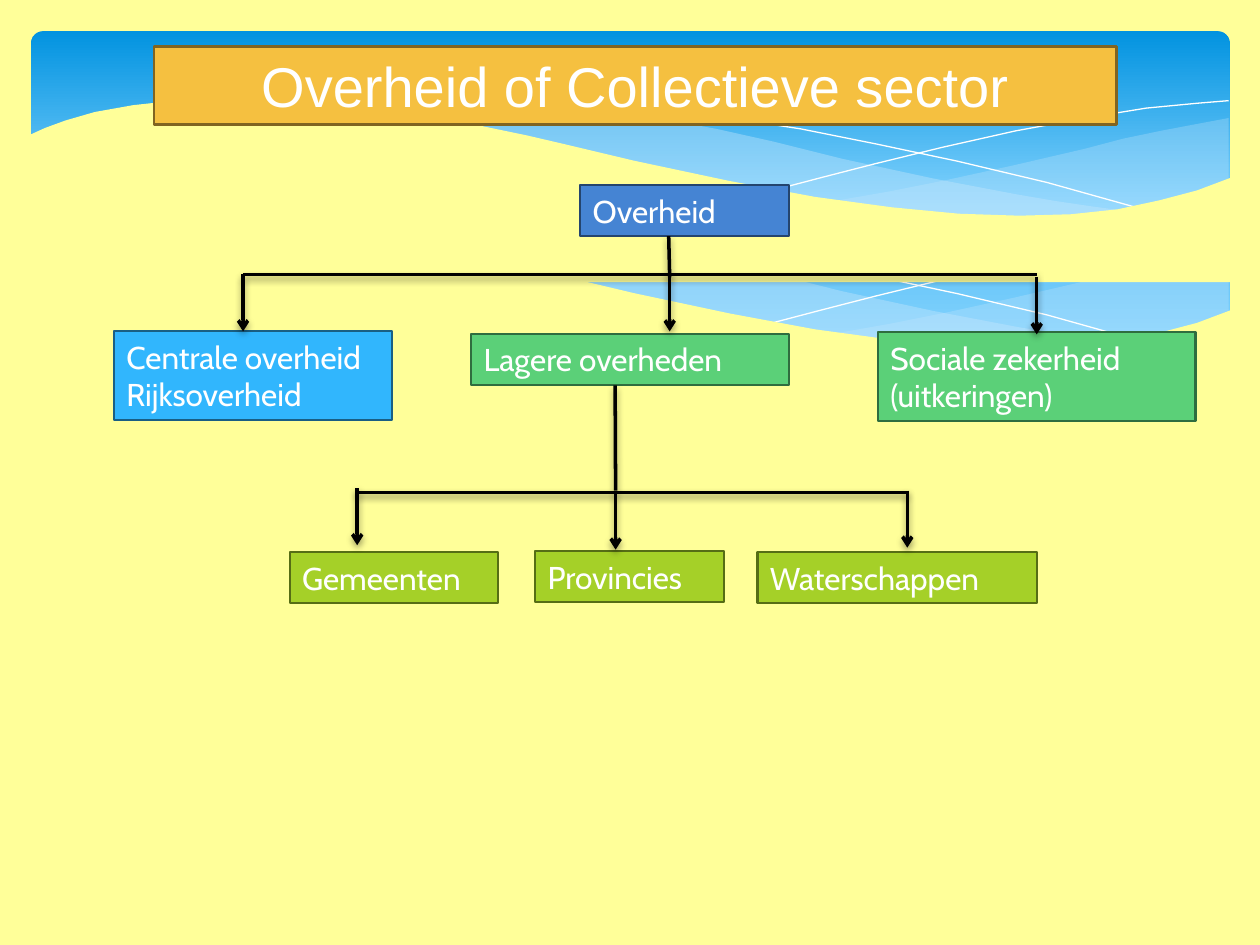
from lxml import etree
from pptx import Presentation
from pptx.dml.color import RGBColor
from pptx.enum.shapes import MSO_CONNECTOR, MSO_SHAPE
from pptx.enum.text import PP_ALIGN
from pptx.oxml.ns import qn
from pptx.util import Cm, Pt

ROUNDED = MSO_SHAPE.ROUNDED_RECTANGLE
RECTANGLE = MSO_SHAPE.RECTANGLE
STRAIGHT = MSO_CONNECTOR.STRAIGHT
LEFT, CENTER = PP_ALIGN.LEFT, PP_ALIGN.CENTER

COLORS = {
    "paper": "FFFF99", "sky": "0293E0", "sky_light": "83D3FE", "wave": "C6E7FC",
    "white": "FFFFFF", "black": "000000",
    "gold": "F5C040", "gold_edge": "806421",
    "blue": "4584D3", "blue_edge": "24456E",
    "cyan": "31B6FD", "cyan_edge": "195F84",
    "green": "5BD078", "green_edge": "2F6D3F",
    "lime": "A5D028", "lime_edge": "566D15",
}

RIGHT_WAVE = [
    (24.77, 2.38), (24.08, 2.51), (23.39, 2.64), (22.63, 2.8), (21.87, 3),
    (20.45, 3.33), (19.13, 3.62), (17.93, 3.86), (16.79, 4.06), (17.91, 4.2),
    (18.92, 4.29), (19.84, 4.36), (20.93, 4.37), (21.92, 4.32), (22.78, 4.2),
    (23.57, 4.03), (24.1, 3.86), (24.77, 3.6),
]
LEFT_WAVE = [
    (22.68, 4.25), (22, 4.16), (21.26, 4.05), (20.5, 3.92), (18.82, 3.6),
    (16.97, 3.2), (15.57, 2.85), (14.45, 2.6), (13.41, 2.41), (12.42, 2.26),
    (11.23, 2.12), (10.13, 2.05), (9.17, 2.03), (8.33, 2.06), (7.26, 2.18),
    (8.2, 2.3), (9.19, 2.47), (10.26, 2.69), (11.4, 2.95), (13.46, 3.43),
    (15.27, 3.81), (16.51, 4.02), (17.65, 4.19), (18.69, 4.29), (19.63, 4.36),
    (20.5, 4.39), (21.29, 4.38), (22.02, 4.33),
]
FALLING_CURVE = [
    (7.85, 2.28), (8.51, 2.16), (9.22, 2.12), (10.19, 2.06), (11.43, 2.08),
    (12.42, 2.13), (13.54, 2.24), (14.78, 2.39), (16.15, 2.6), (17.65, 2.9),
    (19.3, 3.25), (21.11, 3.68), (23.04, 4.22),
]
RISING_CURVE = [
    (15.57, 3.84), (16.56, 3.58), (17.65, 3.3), (19, 2.97), (20.47, 2.64),
    (22, 2.36), (23.11, 2.18), (24.16, 2.08), (24.77, 2.03),
]
PAPER_EDGE = [
    (24.82, 3.58), (24.13, 3.84), (23.37, 4.04), (22.53, 4.22), (21.59, 4.32),
    (20.55, 4.35), (19.33, 4.31), (17.98, 4.18), (16.43, 3.97), (14.71, 3.65),
    (12.78, 3.24), (11.35, 2.9), (10.62, 2.73), (9.27, 2.45), (8, 2.24),
    (6.88, 2.1), (5.84, 2.01), (4.9, 1.98), (4.09, 2), (3.35, 2.05),
    (2.69, 2.12), (1.91, 2.26), (1.32, 2.43), (0.91, 2.58), (0.58, 2.73),
    (0.58, 5.69), (24.82, 5.69),
]


def rgb(name):
    """Return the named colour."""
    return RGBColor.from_string(COLORS[name])


def add_panel(page, height, roundness):
    """Add a rounded blue gradient panel."""
    panel = page.shapes.add_shape(ROUNDED, Cm(0.63), Cm(0.63), Cm(24.16), Cm(height))
    panel.shadow.inherit = False
    panel.adjustments[0] = roundness
    panel.line.fill.background()
    panel.fill.gradient()
    panel.fill.gradient_angle = 270
    for stop, color, position in zip(panel.fill.gradient_stops, ("sky", "sky_light"), (0, 0.9)):
        stop.color.rgb = rgb(color)
        stop.position = position


def add_outline(page, points, drop, closed):
    """Add a freeform through the points, moved down by drop."""
    corners = [(Cm(x), Cm(y + drop)) for x, y in points]
    builder = page.shapes.build_freeform(*corners[0])
    builder.add_line_segments(corners[1:], close=closed)
    outline = builder.convert_to_shape()
    outline.shadow.inherit = False
    return outline


def add_area(page, points, drop, color, opacity=100):
    """Add a filled freeform without an edge."""
    area = add_outline(page, points, drop, True)
    area.line.fill.background()
    area.fill.solid()
    area.fill.fore_color.rgb = rgb(color)
    if opacity < 100:
        tint = area.fill._xPr.find(".//" + qn("a:srgbClr"))
        etree.SubElement(tint, qn("a:alpha"), val=str(opacity * 1000))


def add_curve(page, points, drop):
    """Add a white hairline curve."""
    curve = add_outline(page, points, drop, False)
    curve.fill.background()
    curve.line.color.rgb = rgb("white")
    curve.line.width = Pt(0)


def add_waves(page, drop):
    """Add one set of waves with the paper below it."""
    add_area(page, RIGHT_WAVE, drop, "wave", 29)
    add_area(page, LEFT_WAVE, drop, "wave", 40)
    add_curve(page, FALLING_CURVE, drop)
    add_curve(page, RISING_CURVE, drop)
    add_area(page, PAPER_EDGE, drop, "paper")


def add_box(page, text, frame, color, font="Cabin", size=18, align=LEFT):
    """Add a filled box with white text."""
    box = page.shapes.add_shape(RECTANGLE, *map(Cm, frame))
    box.shadow.inherit = False
    box.fill.solid()
    box.fill.fore_color.rgb = rgb(color)
    box.line.color.rgb = rgb(color + "_edge")
    box.line.width = Pt(1.25)
    box.text_frame.word_wrap = True
    box.text_frame.text = text
    for para in box.text_frame.paragraphs:
        para.alignment = align
        for span in para.runs:
            span.font.name = font
            span.font.size = Pt(size)
            span.font.color.rgb = rgb("white")


def add_line(page, start, end, arrow=False):
    """Add a black line with a soft shadow and an optional arrowhead."""
    line = page.shapes.add_connector(STRAIGHT, *map(Cm, start + end))
    line.line.color.rgb = rgb("black")
    line.line.width = Pt(2)
    if arrow:
        etree.SubElement(line.line._get_or_add_ln(), qn("a:tailEnd"), type="arrow")
    effects = etree.SubElement(line._element.spPr, qn("a:effectLst"))
    shadow = etree.SubElement(effects, qn("a:outerShdw"), blurRad=str(Pt(4)),
                              dist=str(Pt(2)), dir="5400000", rotWithShape="0")
    shade = etree.SubElement(shadow, qn("a:srgbClr"), val=COLORS["black"])
    etree.SubElement(shade, qn("a:alpha"), val="38000")


def main():
    """Build the slide about the public sector."""
    deck = Presentation()
    deck.slide_width, deck.slide_height = Cm(25.4), Cm(19.05)
    page = deck.slides.add_slide(deck.slide_layouts[6])
    page.background.fill.solid()
    page.background.fill.fore_color.rgb = rgb("paper")

    for height, roundness, drop in ((6.86, 0.034, 2.67), (3.96, 0.071, 0)):
        add_panel(page, height, roundness)
        add_waves(page, drop)

    add_box(page, "Overheid of Collectieve sector", (3.1, 0.94, 19.41, 1.57),
            "gold", "Arial", 32, CENTER)
    for text, frame, color in (
        ("Overheid", (11.7, 3.73, 4.2, 1.03), "blue"),
        ("Sociale zekerheid\n(uitkeringen)", (17.7, 6.69, 6.4, 1.8), "green"),
        ("Lagere overheden", (9.5, 6.73, 6.4, 1.03), "green"),
        ("Waterschappen", (15.27, 11.13, 5.64, 1.03), "lime"),
        ("Provincies", (10.79, 11.11, 3.81, 1.03), "lime"),
        ("Gemeenten", (5.84, 11.13, 4.2, 1.03), "lime"),
        ("Centrale overheid\nRijksoverheid", (2.3, 6.67, 5.6, 1.8), "cyan"),
    ):
        add_box(page, text, frame, color)

    add_line(page, (4.9, 5.53), (20.9, 5.53))
    add_line(page, (7.17, 9.93), (18.29, 9.93))
    for x, top in ((13.5, 5.53), (4.9, 5.53), (20.9, 5.59),
                   (7.2, 9.84), (12.41, 9.93), (18.29, 9.89)):
        add_line(page, (x, top), (x, top + 1.15), arrow=True)
    add_line(page, (12.41, 9.89), (12.4, 7.77))
    add_line(page, (13.5, 5.59), (13.48, 4.76))
    deck.save("out.pptx")


if __name__ == "__main__":
    main()
